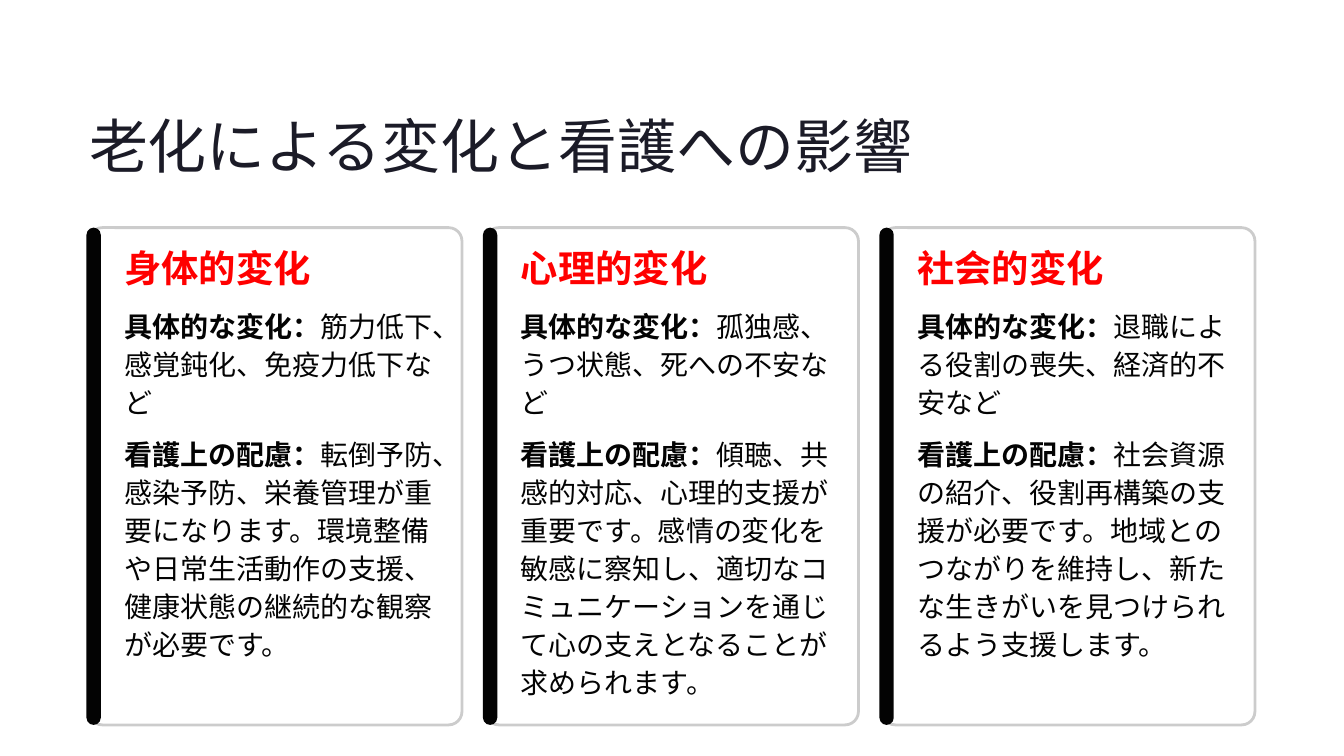
from pptx import Presentation
from pptx import util as u
from pptx.dml.color import RGBColor
from pptx.enum import shapes, text
from pptx.oxml.ns import qn
from lxml import etree

INK, RED, NAVY, WHITE, GREY = "030303", "FF0000", "1B1B27", "FFFFFF", "CCCCCC"

CARDS = [
    ("身体的変化", "筋力低下、感覚鈍化、免疫力低下など",
     "転倒予防、感染予防、栄養管理が重要になります。環境整備や日常生活動作の支援、"
     "健康状態の継続的な観察が必要です。"),
    ("心理的変化", "孤独感、うつ状態、死への不安など",
     "傾聴、共感的対応、心理的支援が重要です。感情の変化を敏感に察知し、"
     "適切なコミュニケーションを通じて心の支えとなることが求められます。"),
    ("社会的変化", "退職による役割の喪失、経済的不安など",
     "社会資源の紹介、役割再構築の支援が必要です。地域とのつながりを維持し、"
     "新たな生きがいを見つけられるよう支援します。"),
]


def color(value):
    return RGBColor.from_string(value)


class CardSlide:
    """Places elements by card column, with offsets in inches from the column's left edge."""

    LEFT, PITCH = 1.06, 4.72
    TOP, CARD_WIDTH, CARD_HEIGHT = 2.71, 4.44, 5.92
    HEADING_FONT, BODY_FONT = "Inter", "Cabin"

    def __init__(self, deck):
        self.page = deck.slides.add_slide(deck.slide_layouts[5])

    def place(self, column, offset, top, width, height):
        left = self.LEFT + column * self.PITCH + offset
        return [u.Inches(n) for n in (left, top, width, height)]

    def fill_text(self, box, spans, font, size, leading, ink, wrap=True):
        """Fills a box with one left-aligned paragraph of (wording, bold) spans."""
        frame = box.text_frame
        frame.margin_left = frame.margin_right = frame.margin_top = frame.margin_bottom = 0
        frame.word_wrap = wrap
        frame.auto_size = text.MSO_AUTO_SIZE.NONE
        frame.vertical_anchor = text.MSO_ANCHOR.TOP
        para = frame.paragraphs[0]
        para.alignment = text.PP_ALIGN.LEFT
        para.line_spacing = u.Pt(leading)
        for wording, bold in spans:
            span = para.add_run()
            span.text = wording
            span.font.name, span.font.size, span.font.bold = font, u.Pt(size), bold
            span.font.color.rgb = color(ink)
            latin = span.font._element.find(qn("a:latin"))
            east_asian = etree.Element(qn("a:ea"), typeface=font)
            latin.addnext(east_asian)

    def title(self, wording):
        box = self.page.shapes.title
        box.left, box.top, box.width, box.height = self.place(0, 0, 1.26, 9.88, 0.88)
        self.fill_text(box, [(wording, False)], self.HEADING_FONT, 50.5, 63.5, NAVY, wrap=False)

    def panel(self, column, offset, width, corner, fill, line=None, opacity=100):
        shape = self.page.shapes.add_shape(
            shapes.MSO_SHAPE.ROUNDED_RECTANGLE,
            *self.place(column, offset, self.TOP, width, self.CARD_HEIGHT))
        shape.adjustments[0] = corner
        shape.shadow.inherit = False
        shape.fill.solid()
        shape.fill.fore_color.rgb = color(fill)
        if opacity < 100:
            tint = shape._element.spPr.find(qn("a:solidFill"))[0]
            etree.SubElement(tint, qn("a:alpha"), val=str(opacity * 1000))
        if line:
            shape.line.color.rgb = color(line)
            shape.line.width = u.Pt(2.4)
        else:
            shape.line.fill.background()

    def label(self, column, top, height, spans, **style):
        box = self.page.shapes.add_textbox(*self.place(column, 0.42, top, 3.71, height))
        self.fill_text(box, spans, **style)

    def card(self, column, heading, changes, care):
        self.panel(column, 0, self.CARD_WIDTH, 0.036, WHITE, line=GREY, opacity=95)
        self.panel(column, -0.03, 0.17, 0.5, INK)
        self.label(column, 3.02, 0.44, [(heading, True)],
                   font=self.HEADING_FONT, size=32, leading=31.5, ink=RED)
        for top, height, lead, detail in ((3.63, 0.91, "具体的な変化：", changes),
                                          (5.16, 2.72, "看護上の配慮：", care)):
            self.label(column, top, height, [(lead, True), (detail, False)],
                       font=self.BODY_FONT, size=24, leading=32.5, ink=INK)


def main():
    deck = Presentation()
    deck.slide_width, deck.slide_height = u.Inches(16), u.Inches(9)
    slide = CardSlide(deck)
    slide.title("老化による変化と看護への影響")
    for column, card in enumerate(CARDS):
        slide.card(column, *card)
    deck.save("out.pptx")


if __name__ == "__main__":
    main()
